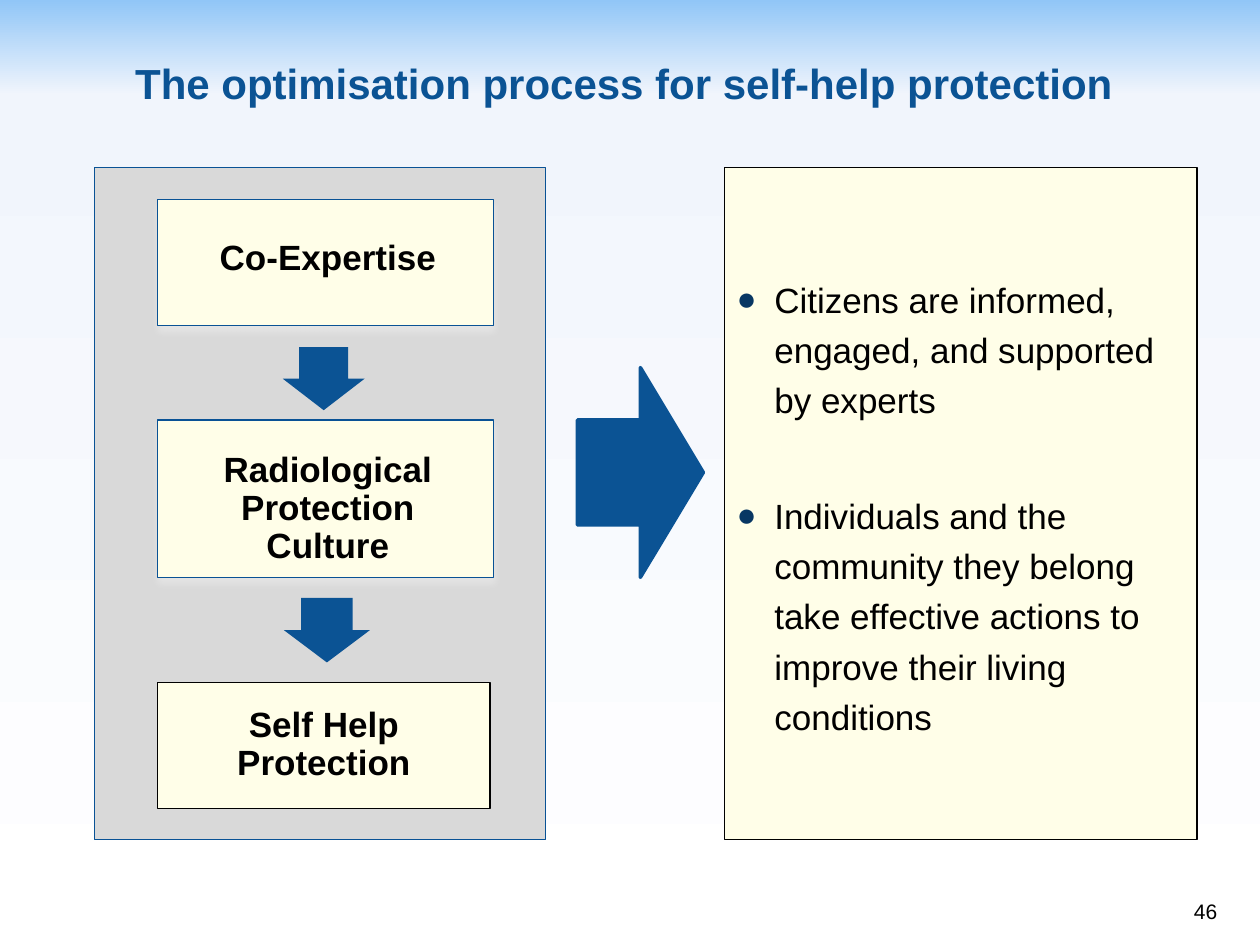
from dataclasses import dataclass
from lxml.etree import SubElement
from pptx import Presentation
from pptx.dml.color import RGBColor
from pptx.enum.shapes import MSO_SHAPE
from pptx.enum.text import MSO_ANCHOR, PP_ALIGN
from pptx.oxml import parse_xml
from pptx.oxml.ns import nsdecls, qn
from pptx.shapes.autoshape import Shape
from pptx.slide import Slide
from pptx.util import Cm, Pt

BLUE = RGBColor(0x0B, 0x53, 0x94)
EDGE = RGBColor(0x09, 0x52, 0x95)
NAVY = RGBColor(0x08, 0x37, 0x63)
CREAM = RGBColor(0xFF, 0xFE, 0xE8)
GREY = RGBColor(0xD9, 0xD9, 0xD9)
GLOW = RGBColor(0xF2, 0xF2, 0xF2)
BLACK = RGBColor(0, 0, 0)
SKY = ((0, "91C6F7"), (10, "F1F5FC"), (100, "FFFFFF"))


@dataclass(frozen=True)
class Area:
    """A place on the slide, in centimetres."""
    left: float
    top: float
    width: float
    height: float

    def cm(self) -> tuple:
        return Cm(self.left), Cm(self.top), Cm(self.width), Cm(self.height)


@dataclass(frozen=True)
class Step:
    """A step of the process: its box and the area of its label."""
    text: str
    box: Area
    label: Area
    line: RGBColor = EDGE
    glow: bool = True


STEPS = (
    Step("Co-Expertise", Area(3.18, 4.02, 6.77, 2.54), Area(3.28, 4.11, 6.66, 2.23)),
    Step("Radiological Protection Culture", Area(3.18, 8.47, 6.77, 3.18),
         Area(3.28, 8.89, 6.66, 2.75)),
    Step("Self Help Protection", Area(3.18, 13.76, 6.7, 2.54),
         Area(3.18, 13.76, 6.7, 2.54), BLACK, False),
)
ARROWS = (Area(5.89, 6.81, 1.27, 1.65), Area(5.94, 11.84, 1.3, 1.73))
POINTS = (
    "Citizens are informed, engaged, and supported by experts",
    "Individuals and the community they belong take effective actions "
    "to improve their living conditions",
)


def add_dot(para) -> None:
    """Give a paragraph a hanging round bullet."""
    props = para._p.get_or_add_pPr()
    props.set("marL", str(Cm(0.76)))
    props.set("indent", str(-Cm(0.76)))
    tint = SubElement(props, qn("a:buClr"))
    SubElement(tint, qn("a:srgbClr"), val=str(NAVY))
    SubElement(props, qn("a:buSzPct"), val="95000")
    SubElement(props, qn("a:buFont"), typeface="Arial")
    SubElement(props, qn("a:buChar"), char="●")


def write(shape: Shape, *texts: str, size=20, bold=False, color=BLACK,
          align=PP_ALIGN.LEFT, anchor=MSO_ANCHOR.MIDDLE, lead=1.0, gap=0,
          after=0, dots=False, pad=(0.25, 0.13, 0.25, 0.13)) -> None:
    """Write paragraphs; pad is left, top, right and bottom in cm."""
    frame = shape.text_frame
    frame.word_wrap = True
    frame.vertical_anchor = anchor
    (frame.margin_left, frame.margin_top,
     frame.margin_right, frame.margin_bottom) = map(Cm, pad)
    for i, text in enumerate(texts):
        para = frame.add_paragraph() if i else frame.paragraphs[0]
        para.text = text
        para.alignment = align
        para.line_spacing = lead
        para.space_before = Pt(gap if i else 0)
        para.space_after = Pt(after)
        if dots:
            add_dot(para)
        font = para.runs[0].font
        font.name, font.size, font.bold = "Arial", Pt(size), bold
        font.color.rgb = color


def draw(slide: Slide, kind: MSO_SHAPE, area: Area, fill: RGBColor,
         line: RGBColor | None = None, width: float = 0.75) -> Shape:
    shape = slide.shapes.add_shape(kind, *area.cm())
    shape.shadow.inherit = False
    shape.fill.solid()
    shape.fill.fore_color.rgb = fill
    if line is None:
        shape.line.fill.background()
    else:
        shape.line.color.rgb = line
        shape.line.width = Pt(width)
    return shape


def add_glow(shape: Shape) -> None:
    """Cast a soft pale shadow downwards."""
    effects = shape._element.spPr.find(qn("a:effectLst"))
    cast = SubElement(effects, qn("a:outerShdw"), blurRad=str(Pt(4.5)),
                      dist=str(Pt(3)), dir="5400000", rotWithShape="0")
    tint = SubElement(cast, qn("a:srgbClr"), val=str(GLOW))
    SubElement(tint, qn("a:alpha"), val="48000")


def draw_step(slide: Slide, step: Step) -> None:
    box = draw(slide, MSO_SHAPE.RECTANGLE, step.box, CREAM, step.line)
    if step.glow:
        add_glow(box)
    same = step.label == step.box
    label = box if same else slide.shapes.add_textbox(*step.label.cm())
    write(label, step.text, bold=True, align=PP_ALIGN.CENTER, lead=0.9,
          after=7, pad=(0.28,) * 4)


def paint(slide: Slide) -> None:
    """Fill the background from blue at the top to white."""
    fill = slide.background.fill
    fill.gradient()
    fill.gradient_angle = 270
    stops = fill.gradient_stops._gsLst
    for stop in list(stops):
        stops.remove(stop)
    for place, tint in SKY:
        stops.append(parse_xml(
            f'<a:gs {nsdecls("a")} pos="{place * 1000}">'
            f'<a:srgbClr val="{tint}"/></a:gs>'))


def main() -> None:
    deck = Presentation()
    deck.slide_width, deck.slide_height = Cm(25.4), Cm(19.05)
    slide = deck.slides.add_slide(deck.slide_layouts[5])
    paint(slide)

    # Title
    title = slide.shapes.title
    title.left, title.top, title.width, title.height = Area(0, 0.43, 25.4, 2.34).cm()
    write(title, "The optimisation process for self-help protection", size=24,
          bold=True, color=BLUE, align=PP_ALIGN.CENTER, pad=(0, 0.13, 0.24, 0))

    # Process on the left
    draw(slide, MSO_SHAPE.RECTANGLE, Area(1.9, 3.38, 9.1, 13.55), GREY, EDGE)
    for step in STEPS:
        draw_step(slide, step)
    for area in ARROWS:
        arrow = draw(slide, MSO_SHAPE.RIGHT_ARROW, area, BLUE)
        arrow.rotation = 90
        arrow.adjustments[0] = 0.6

    # Arrow to the outcome
    draw(slide, MSO_SHAPE.RIGHT_ARROW, Area(11.64, 7.41, 2.54, 4.23), BLUE, BLUE, 2)

    # Outcome on the right
    panel = draw(slide, MSO_SHAPE.RECTANGLE, Area(14.6, 3.38, 9.53, 13.55), CREAM, BLACK)
    write(panel, *POINTS, lead=1.2, gap=37, dots=True)

    # Page number
    page = slide.shapes.add_textbox(*Area(19.51, 17.48, 5.28, 1.27).cm())
    write(page, "46", size=12, align=PP_ALIGN.RIGHT, anchor=MSO_ANCHOR.BOTTOM)

    deck.save("out.pptx")


if __name__ == "__main__":
    main()
